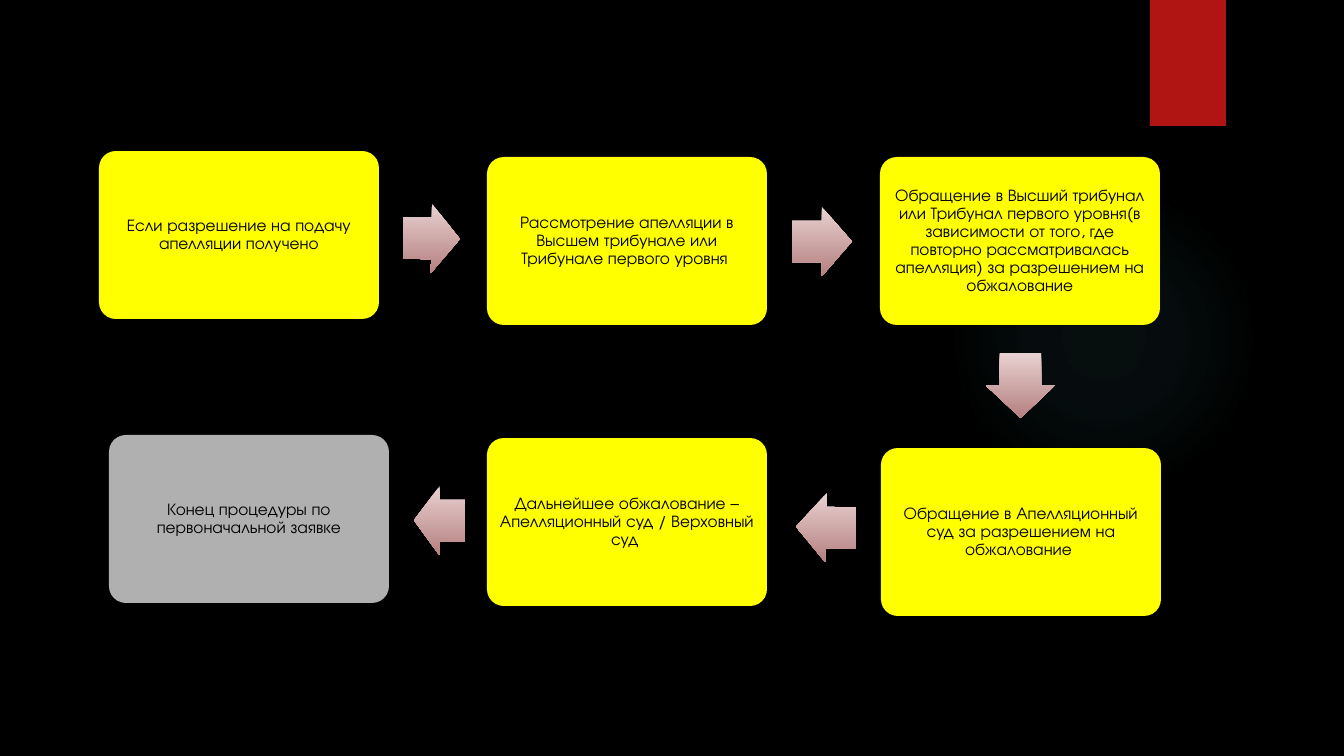
from lxml import etree
from pptx import Presentation
from pptx.dml.color import RGBColor
from pptx.enum.shapes import MSO_SHAPE
from pptx.enum.text import MSO_ANCHOR, PP_ALIGN
from pptx.oxml.ns import qn
from pptx.util import Emu, Pt

RECT = MSO_SHAPE.RECTANGLE
ROUND = MSO_SHAPE.ROUNDED_RECTANGLE
OVAL = MSO_SHAPE.OVAL
ARROW = MSO_SHAPE.RIGHT_ARROW
MIDDLE = MSO_ANCHOR.MIDDLE
CENTER = PP_ALIGN.CENTER

BOX_W, BOX_H, ARROW_H = 280, 168, 69
YELLOW, GREY = "FFFF00", "B0B0B0"

# left, top, fill, text
STEPS = [
    (99, 151, YELLOW, "Если разрешение на подачу апелляции получено"),
    (487, 157, YELLOW, "Рассмотрение апелляции в Высшем трибунале или "
                       "Трибунале первого уровня "),
    (880, 157, YELLOW, "Обращение в Высший трибунал или Трибунал первого "
                       "уровня(в зависимости от того, где повторно "
                       "рассматривалась апелляция) за разрешением на "
                       "обжалование"),
    (881, 448, YELLOW, "Обращение в Апелляционный суд за разрешением на "
                       "обжалование "),
    (487, 438, YELLOW, "Дальнейшее обжалование – Апелляционный суд / "
                       "Верховный суд "),
    (109, 435, GREY, "Конец процедуры по первоначальной заявке"),
]
# left, top, width, rotation
ARROWS = [
    (403, 204, 57, 1),
    (792, 207, 60, 0),
    (988, 351, 65, 89.8),
    (796, 493, 60, 181.5),
    (414, 486, 51, 180.4),
]


def px(n):
    return Emu(round(n * 914400 / 100.8))


def rgb(value):
    return RGBColor.from_string(value)


def write(s, text, size=12, color="000000", font="TeX Gyre Adventor", inset=5):
    tf = s.text_frame
    tf.word_wrap = True
    tf.vertical_anchor = MIDDLE
    tf.margin_left = tf.margin_right = px(inset)
    tf.margin_top = tf.margin_bottom = px(inset)
    p = tf.paragraphs[0]
    p.alignment = CENTER
    p.line_spacing = 0.9
    r = p.add_run()
    r.text = text
    r.font.size = Pt(size)
    r.font.name = font
    r.font.color.rgb = rgb(color)


class Deck:
    def __init__(self, width, height, background):
        self.prs = Presentation()
        self.prs.slide_width, self.prs.slide_height = px(width), px(height)
        self.slide = self.prs.slides.add_slide(self.prs.slide_layouts[6])
        fill = self.slide.background.fill
        fill.solid()
        fill.fore_color.rgb = rgb(background)

    def shape(self, kind, x, y, w, h, fill=None):
        s = self.slide.shapes.add_shape(kind, px(x), px(y), px(w), px(h))
        s.shadow.inherit = False
        s.line.fill.background()
        if fill:
            s.fill.solid()
            s.fill.fore_color.rgb = rgb(fill)
        return s

    def glow(self, x, y, size, color, stops):
        s = self.shape(OVAL, x, y, size, size)
        s.fill.gradient()
        grad = s._element.spPr.find(qn("a:gradFill"))
        for child in list(grad):
            grad.remove(child)
        stop_list = etree.SubElement(grad, qn("a:gsLst"))
        for position, alpha in stops:
            gs = etree.SubElement(stop_list, qn("a:gs"), pos=str(position * 1000))
            clr = etree.SubElement(gs, qn("a:srgbClr"), val=color)
            etree.SubElement(clr, qn("a:alpha"), val=str(alpha * 1000))
        circle = etree.SubElement(grad, qn("a:path"), path="circle")
        etree.SubElement(circle, qn("a:fillToRect"),
                         l="50000", t="50000", r="50000", b="50000")

    def box(self, x, y, fill, text):
        s = self.shape(ROUND, x, y, BOX_W, BOX_H, fill)
        s.adjustments[0] = 0.1
        write(s, text)

    def arrow(self, x, y, w, rotation, colors=("E8D2D1", "B57F7F")):
        s = self.shape(ARROW, x, y, w, ARROW_H)
        s.adjustments[0], s.adjustments[1] = 0.6, 0.5
        s.rotation = rotation
        s.fill.gradient()
        s.fill.gradient_angle = 270
        for stop, position, color in zip(s.fill.gradient_stops, (0, 1), colors):
            stop.position = position
            stop.color.rgb = rgb(color)
        # Keep the light side on top however the arrow turns
        s._element.spPr.find(qn("a:gradFill")).set("rotWithShape", "0")


def main():
    deck = Deck(1344, 756, "000000")

    # Backdrop
    deck.glow(949, 184, 310, "50B9C1", [(0, 7), (36, 6), (69, 0)])
    deck.shape(RECT, 1150, 0, 76, 126, "B01513")

    # Appeal procedure
    for step in STEPS:
        deck.box(*step)
    for arrow in ARROWS:
        deck.arrow(*arrow)

    deck.prs.save("out.pptx")


if __name__ == "__main__":
    main()
